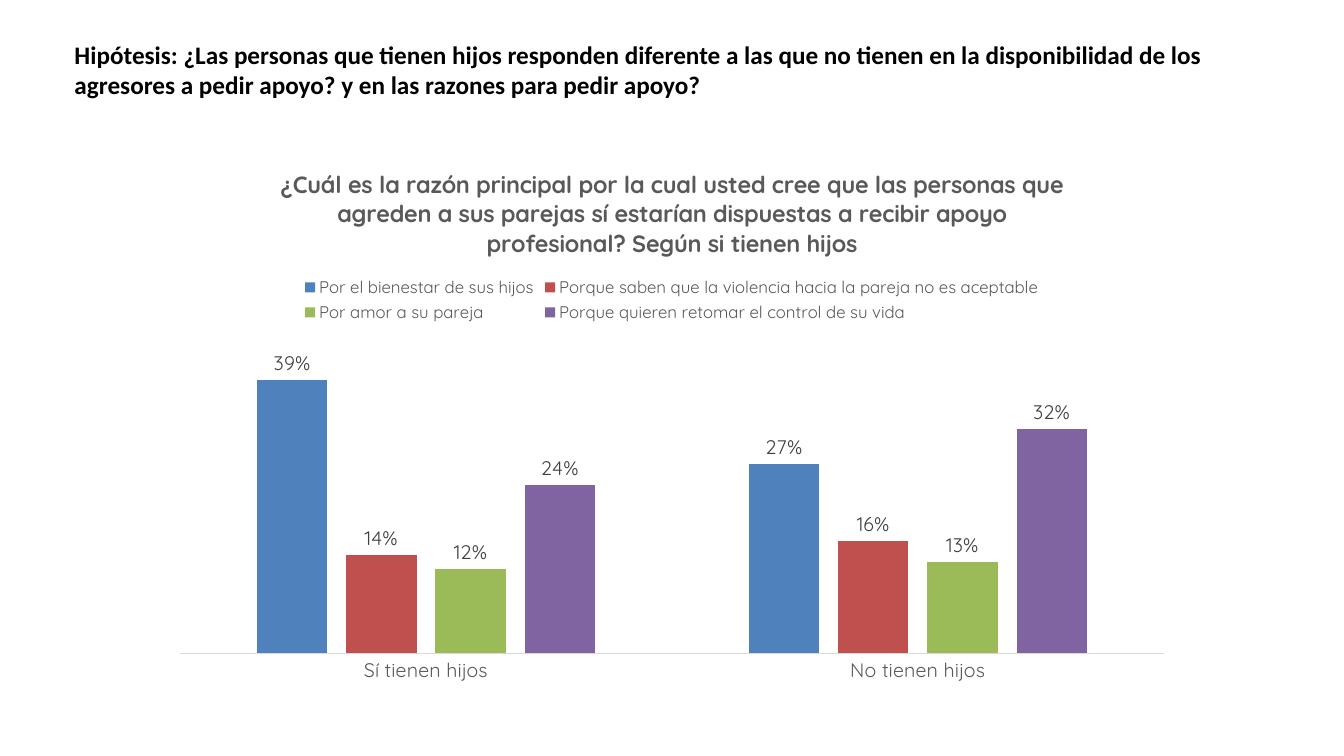
from lxml import etree
from pptx import Presentation
from pptx.chart.data import CategoryChartData
from pptx.dml.color import RGBColor
from pptx.enum import chart as ch, text
from pptx.oxml import ns
from pptx.util import Pt

HEADING = ("Hipótesis: ¿Las personas que tienen hijos responden diferente a las que no "
           "tienen en la disponibilidad de los agresores a pedir apoyo? y en las razones "
           "para pedir apoyo?")
QUESTION = ("¿Cuál es la razón principal por la cual usted cree que las personas que "
            "agreden a sus parejas sí estarían dispuestas a recibir apoyo profesional? "
            "Según si tienen hijos")
GROUPS = ["Sí tienen hijos", "No tienen hijos"]
REASONS = [
    ("Por el bienestar de sus hijos", (0.39, 0.27), "4F81BD"),
    ("Porque saben que la violencia hacia la pareja no es aceptable", (0.14, 0.16), "C0504D"),
    ("Por amor a su pareja", (0.12, 0.13), "9BBB59"),
    ("Porque quieren retomar el control de su vida", (0.24, 0.32), "8064A2"),
]


def rgb(value):
    return RGBColor.from_string(value)


def apply(target, values):
    """Set each attribute named in values on target."""
    for name, value in values.items():
        setattr(target, name, value)


class SlideBuilder:
    HEADING_FONT, CHART_FONT = "Calibri", "Quicksand"
    BLACK, GREY, DARK, RULE = "000000", "595959", "404040", "D9D9D9"

    def __init__(self, slide):
        self.slide = slide

    def style(self, font, name, size, color, bold=False):
        apply(font, {"name": name, "size": Pt(size), "bold": bold})
        font.color.rgb = rgb(color)

    def heading(self, wording, left, top, width, height):
        title = self.slide.shapes.title
        apply(title, {"left": Pt(left), "top": Pt(top),
                      "width": Pt(width), "height": Pt(height)})
        frame = title.text_frame
        frame.text = wording
        apply(frame, {"word_wrap": True, "vertical_anchor": text.MSO_ANCHOR.TOP,
                      "auto_size": text.MSO_AUTO_SIZE.SHAPE_TO_FIT_TEXT})
        paragraph = frame.paragraphs[0]
        paragraph.alignment = text.PP_ALIGN.LEFT
        self.style(paragraph.runs[0].font, self.HEADING_FONT, 18, self.BLACK, True)

    def columns(self, question, groups, reasons, left, top, width, height):
        data = CategoryChartData(number_format="0%")
        data.categories = groups
        for reason, shares, _ in reasons:
            data.add_series(reason, shares)
        chart = self.slide.shapes.add_chart(
            ch.XL_CHART_TYPE.COLUMN_CLUSTERED, Pt(left), Pt(top), Pt(width), Pt(height),
            data).chart
        self.style(chart.font, self.CHART_FONT, 14, self.BLACK)

        chart.has_title = True
        chart.chart_title.text_frame.text = question
        question_run = chart.chart_title.text_frame.paragraphs[0].runs[0]
        self.style(question_run.font, self.CHART_FONT, 16.8, self.GREY, True)

        chart.has_legend = True
        apply(chart.legend, {"position": ch.XL_LEGEND_POSITION.TOP,
                             "include_in_layout": False})
        self.style(chart.legend.font, self.CHART_FONT, 12, self.GREY)

        self.axes(chart)
        plot = chart.plots[0]
        apply(plot, {"gap_width": 219, "overlap": -27, "vary_by_categories": False})
        for series, (_, _, color) in zip(plot.series, reasons):
            series.format.fill.solid()
            series.format.fill.fore_color.rgb = rgb(color)
            labels = series.data_labels
            apply(labels, {"show_value": True, "number_format": "0%",
                           "number_format_is_linked": False,
                           "position": ch.XL_LABEL_POSITION.OUTSIDE_END})
            self.style(labels.font, self.CHART_FONT, 14, self.DARK)
        self.place_plot(chart, x=0.02, y=0.35, w=0.96, h=0.58)

    def axes(self, chart):
        apply(chart.value_axis, {"visible": False, "has_major_gridlines": False,
                                 "minimum_scale": 0, "maximum_scale": 0.45})
        axis = chart.category_axis
        apply(axis, {"major_tick_mark": ch.XL_TICK_MARK.NONE,
                     "minor_tick_mark": ch.XL_TICK_MARK.NONE})
        self.style(axis.tick_labels.font, self.CHART_FONT, 14, self.GREY)
        axis.format.line.width = Pt(0.75)
        axis.format.line.color.rgb = rgb(self.RULE)

    def place_plot(self, chart, **fractions):
        """Fix the inner plot area as fractions of the chart's size."""
        area = chart.plots[0]._element.getparent()
        for old in area.findall(ns.qn("c:layout")):
            area.remove(old)
        layout = etree.Element(ns.qn("c:layout"))
        manual = etree.SubElement(layout, ns.qn("c:manualLayout"))
        settings = {"layoutTarget": "inner", "xMode": "edge", "yMode": "edge", **fractions}
        for tag, value in settings.items():
            etree.SubElement(manual, ns.qn("c:" + tag)).set("val", str(value))
        area.insert(0, layout)


def main():
    deck = Presentation()
    apply(deck, {"slide_width": Pt(960), "slide_height": Pt(540)})
    builder = SlideBuilder(deck.slides.add_slide(deck.slide_layouts[5]))
    builder.heading(HEADING, 46, 24.5, 840, 51)
    builder.columns(QUESTION, GROUPS, REASONS, 114, 105, 732, 389)
    deck.save("out.pptx")


if __name__ == "__main__":
    main()
